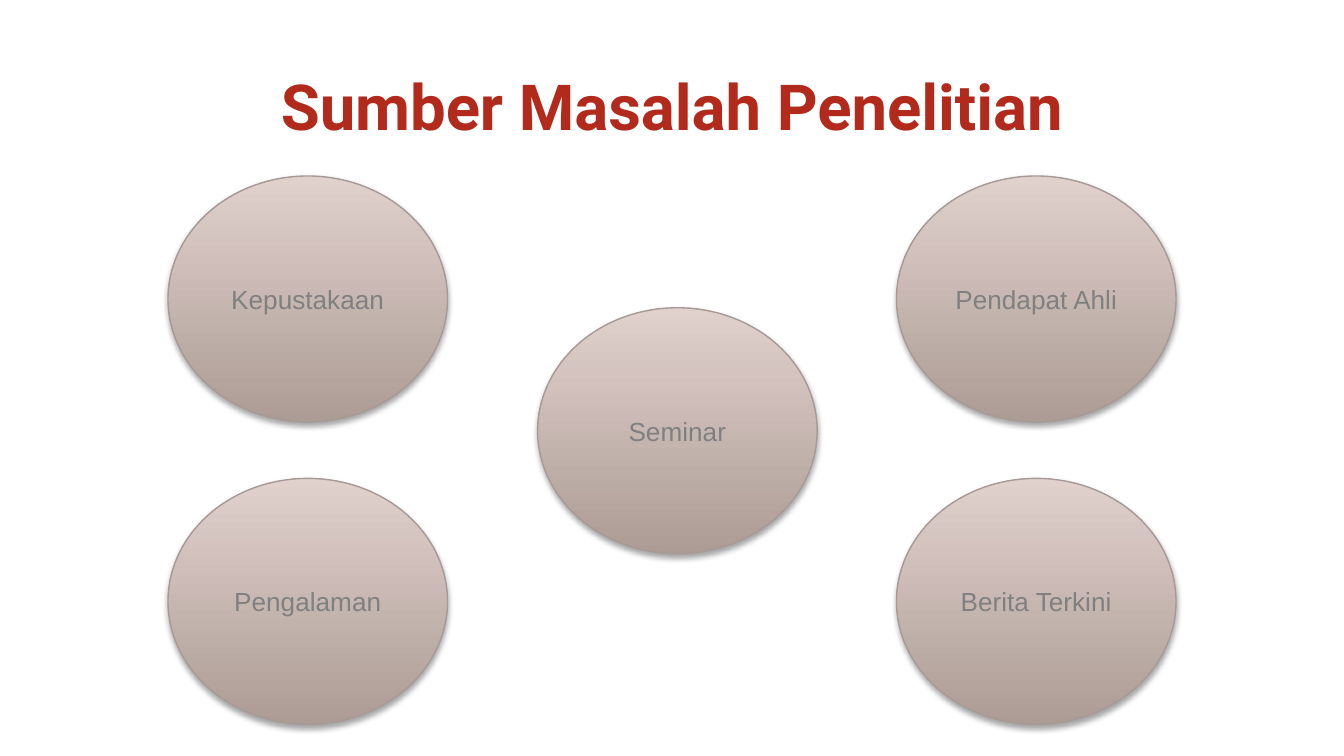
"""Build the slide on sources of research problems."""
from lxml import etree
from pptx import Presentation
from pptx.dml.color import RGBColor
from pptx.enum.shapes import MSO_SHAPE as Shape
from pptx.enum.text import MSO_ANCHOR as Anchor, PP_ALIGN as Align
from pptx.oxml import parse_xml
from pptx.oxml.ns import nsdecls
from pptx.util import Inches, Pt

RED = RGBColor(0xB1, 0x2A, 0x1C)
GREY = RGBColor(0x80, 0x80, 0x80)
DARK = RGBColor(0xAD, 0x9C, 0x96)
LIGHT = RGBColor(0xE1, 0xD1, 0xCD)
EDGE = RGBColor(0xA7, 0x99, 0x95)
BLACK = RGBColor(0, 0, 0)

TITLE = "Sumber Masalah Penelitian"
COLUMNS = [
    (1.25, 1.31, ["Kepustakaan", "Pengalaman"]),
    (6.67, 1.31, ["Pendapat Ahli", "Berita Terkini"]),
    (4, 2.29, ["Seminar"]),
]
PAGE_WIDTH, PAGE_RATIO = 10, 16 / 9
WIDTH, HEIGHT, ROW_STEP = 2.08, 1.83, 2.25
TITLE_FONT = {"name": "Roboto", "size": Pt(34), "bold": True}
LABEL_FONT = {"name": "Arial", "size": Pt(14)}

SHADOW = (
    f'<a:effectLst {nsdecls("a")}><a:outerShdw blurRad="{Pt(3.1)}" dist="{Pt(1.8)}" '
    f'dir="5400000" rotWithShape="0"><a:srgbClr val="{BLACK}"><a:alpha val="35000"/>'
    "</a:srgbClr></a:outerShdw></a:effectLst>"
)
OUTLINE = (
    f'<a:ln {nsdecls("a")} w="{Pt(0.75)}"><a:solidFill>'
    f'<a:srgbClr val="{GREY}"/></a:solidFill></a:ln>'
)


def write(box, text, font, color, anchor):
    frame = box.text_frame
    frame.word_wrap = True
    frame.vertical_anchor = anchor
    para = frame.paragraphs[0]
    para.alignment = Align.CENTER
    span = para.add_run()
    span.text = text
    for name, value in font.items():
        setattr(span.font, name, value)
    span.font.color.rgb = color
    return span


def add_circle(page, text, left, top):
    circle = page.shapes.add_shape(
        Shape.OVAL, Inches(left), Inches(top), Inches(WIDTH), Inches(HEIGHT)
    )
    circle.fill.gradient()
    circle.fill.gradient_angle = 90
    for stop, color in zip(circle.fill.gradient_stops, (DARK, LIGHT)):
        stop.color.rgb = color
    circle.line.color.rgb = EDGE
    circle.line.width = Pt(0.75)
    circle.shadow.inherit = False
    effects = circle.element.spPr.find("{*}effectLst")
    effects.getparent().replace(effects, parse_xml(SHADOW))
    span = write(circle, text, LABEL_FONT, GREY, Anchor.MIDDLE)
    span.font._element.insert(0, etree.fromstring(OUTLINE))


def main():
    deck = Presentation()
    deck.slide_width = Inches(PAGE_WIDTH)
    deck.slide_height = Inches(PAGE_WIDTH / PAGE_RATIO)
    page = deck.slides.add_slide(deck.slide_layouts[6])

    title = page.shapes.add_textbox(Inches(0.78), Inches(0.4), Inches(8.44), Inches(0.63))
    for side in ("left", "top", "right", "bottom"):
        setattr(title.text_frame, f"margin_{side}", Inches(0.1))
    write(title, TITLE, TITLE_FONT, RED, Anchor.TOP)

    for left, top, labels in COLUMNS:
        for row, label in enumerate(labels):
            add_circle(page, label, left, top + row * ROW_STEP)

    deck.save("out.pptx")


if __name__ == "__main__":
    main()
